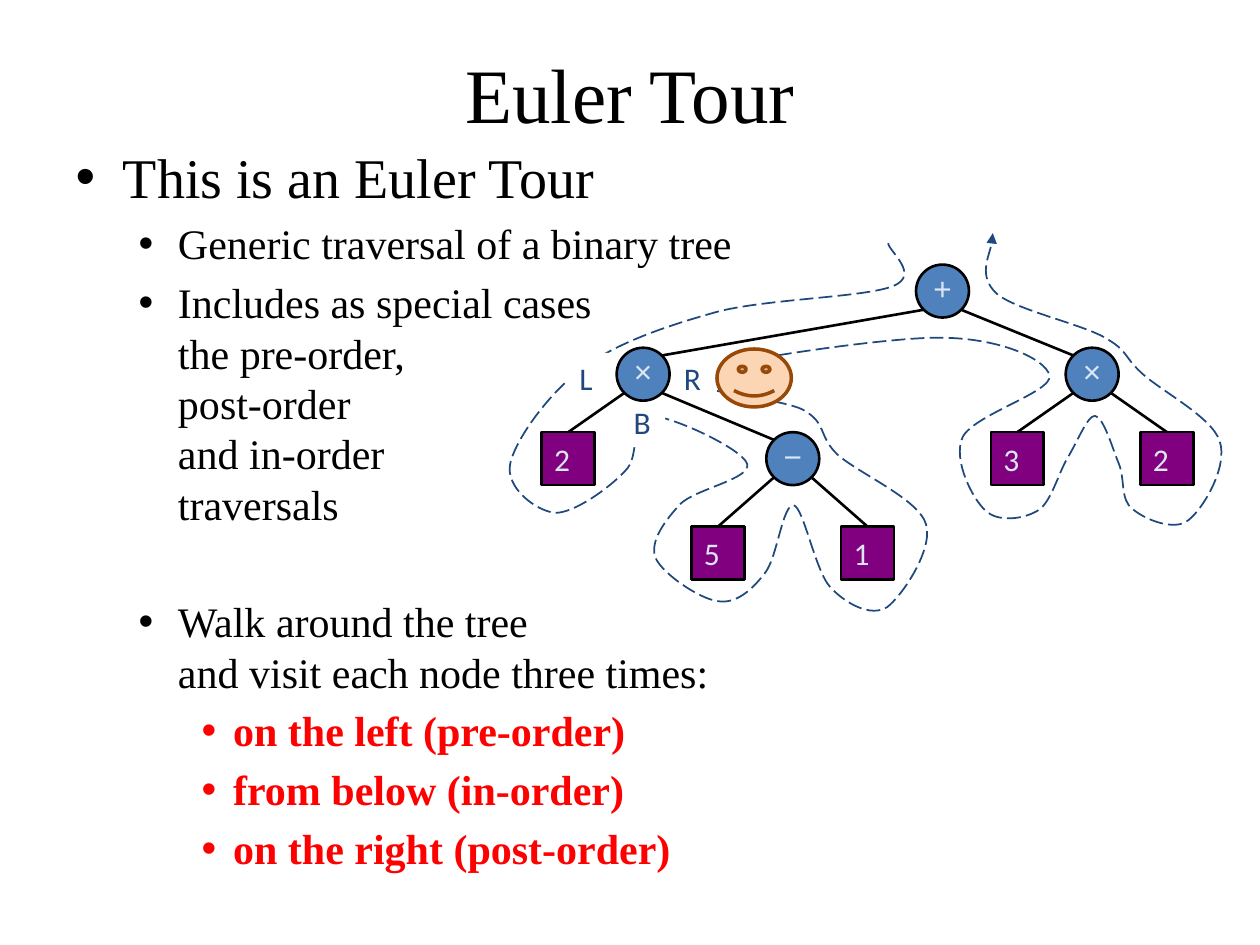
from pptx import Presentation
from pptx.dml.color import RGBColor
from pptx.enum.dml import MSO_LINE
from pptx.enum.shapes import MSO_CONNECTOR, MSO_SHAPE
from pptx.enum.text import MSO_ANCHOR, MSO_AUTO_SIZE, PP_ALIGN
from pptx.oxml.ns import qn
from pptx.util import Inches, Pt
from lxml.etree import SubElement

SERIF = "Times New Roman"
BLACK, RED, NAVY, WHITE = "000000", "FF0000", "1F497D", "FFFFFF"
NODE_FILL, LEAF_FILL, NODE_TEXT = "4F81BD", "800080", "DCE6F2"

# level, text, space before in points
BULLETS = [
    (0, "This is an Euler Tour", 6.4),
    (1, "Generic traversal of a binary tree", 4.8),
    (1, "Includes as special cases\vthe pre-order,\vpost-order\vand in-order\vtraversals", 4.8),
    (1, "Walk around the tree\vand visit each node three times:", 38.2),
    (2, "on the left (pre-order)", 4.8),
    (2, "from below (in-order)", 4.8),
    (2, "on the right (post-order)", 4.8),
]

# An inner node is (symbol, left, right); a leaf is its number.
TREE = ("+", ("×", "2", ("−", "5", "1")), ("×", "3", "2"))
NODE_SIZE = 0.42
FIRST_COLUMN, COLUMN_STEP = 4.3, 0.594
ROW_TOPS = [2.1, 2.76, 3.43, 4.18]
VISIT_LABELS = [("L", 4.5, 2.8, 0.33), ("B", 4.93, 3.15, 0.35), ("R", 5.33, 2.8, 0.36)]

TOUR_START = (7.05, 1.93)
# Two control points and the end point of each curve
TOUR_CURVES = [
    (7.05, 1.99, 7.31, 2.18, 7.09, 2.27), (6.87, 2.36, 6.12, 2.37, 5.71, 2.47),
    (5.31, 2.58, 4.92, 2.71, 4.64, 2.91), (4.36, 3.11, 4.09, 3.49, 4.05, 3.68),
    (4.01, 3.87, 4.25, 4.05, 4.4, 4.07), (4.55, 4.08, 4.84, 3.87, 4.96, 3.74),
    (5.09, 3.62, 4.99, 3.32, 5.15, 3.3), (5.31, 3.29, 5.89, 3.56, 5.93, 3.68),
    (5.97, 3.8, 5.52, 3.88, 5.4, 4), (5.28, 4.13, 5.16, 4.29, 5.2, 4.42),
    (5.25, 4.55, 5.55, 4.75, 5.69, 4.77), (5.84, 4.8, 5.97, 4.68, 6.07, 4.55),
    (6.17, 4.43, 6.21, 4, 6.3, 4.01), (6.38, 4.03, 6.47, 4.53, 6.59, 4.66),
    (6.71, 4.79, 6.91, 4.9, 7.04, 4.82), (7.16, 4.73, 7.41, 4.36, 7.35, 4.16),
    (7.29, 3.96, 6.82, 3.76, 6.65, 3.61), (6.49, 3.46, 6.57, 3.36, 6.37, 3.25),
    (6.17, 3.15, 5.25, 3.08, 5.43, 2.98), (5.61, 2.89, 6.97, 2.68, 7.45, 2.68),
    (7.94, 2.68, 8.3, 2.85, 8.33, 2.98), (8.36, 3.11, 7.73, 3.29, 7.64, 3.47),
    (7.56, 3.65, 7.72, 3.96, 7.82, 4.05), (7.92, 4.15, 8.13, 4.12, 8.24, 4.05),
    (8.34, 3.99, 8.4, 3.76, 8.47, 3.64), (8.55, 3.51, 8.63, 3.3, 8.69, 3.3),
    (8.76, 3.31, 8.83, 3.56, 8.88, 3.68), (8.93, 3.8, 8.89, 3.97, 8.99, 4.04),
    (9.08, 4.12, 9.32, 4.22, 9.43, 4.13), (9.55, 4.04, 9.75, 3.7, 9.68, 3.5),
    (9.62, 3.31, 9.21, 3.1, 9.06, 2.96), (8.91, 2.82, 8.96, 2.79, 8.77, 2.68),
    (8.58, 2.57, 8.06, 2.46, 7.91, 2.33), (7.76, 2.19, 7.89, 1.95, 7.88, 1.85),
]


def rgb(color):
    return RGBColor.from_string(color)


def set_font(paragraph, name, size, color, bold=None):
    font = paragraph.font
    font.name, font.size, font.bold = name, Pt(size), bold
    font.color.rgb = rgb(color)


def place(shape, left, top, width, height):
    shape.left, shape.top = Inches(left), Inches(top)
    shape.width, shape.height = Inches(width), Inches(height)


def set_line(line, color, width):
    line.color.rgb = rgb(color)
    line.width = Pt(width)


def fill_title(title):
    place(title, 0.5, 0.3, 9, 0.87)
    title.text_frame.text = "Euler Tour"
    title.text_frame.vertical_anchor = MSO_ANCHOR.MIDDLE
    paragraph = title.text_frame.paragraphs[0]
    paragraph.alignment = PP_ALIGN.CENTER
    set_font(paragraph, SERIF, 44, BLACK)


def fill_body(body):
    place(body, 0.5, 1.08, 5.99, 5.92)
    frame = body.text_frame
    frame.auto_size = MSO_AUTO_SIZE.NONE
    for index, (level, text, space_before) in enumerate(BULLETS):
        paragraph = frame.add_paragraph() if index else frame.paragraphs[0]
        paragraph.text = text
        paragraph.level = level
        paragraph.space_before = Pt(space_before)
        is_visit = level == 2
        set_font(paragraph, SERIF, 24 if level else 32,
                 RED if is_visit else BLACK, is_visit)
        properties = paragraph._p.get_or_add_pPr()
        bullet = properties.makeelement(qn("a:buChar"), {"char": "•"})
        properties.find(qn("a:defRPr")).addprevious(bullet)


def add_box(shapes, kind, box, fill, outline=None, width=1.5):
    shape = shapes.add_shape(kind, *map(Inches, box))
    shape.shadow.inherit = False
    shape.fill.solid()
    shape.fill.fore_color.rgb = rgb(fill)
    if outline:
        set_line(shape.line, outline, width)
    else:
        shape.line.fill.background()
    return shape


def set_label(shape, text, font, color, alignment=PP_ALIGN.LEFT, anchor=MSO_ANCHOR.MIDDLE):
    frame = shape.text_frame
    frame.text = text
    frame.word_wrap = False
    frame.vertical_anchor = anchor
    frame.paragraphs[0].alignment = alignment
    set_font(frame.paragraphs[0], font, 18, color)


def add_tour(shapes):
    """Draw the dashed walk: line segments are regrouped into cubic curves."""
    points = [(Inches(curve[i]), Inches(curve[i + 1]))
              for curve in TOUR_CURVES for i in (0, 2, 4)]
    builder = shapes.build_freeform(*map(Inches, TOUR_START))
    builder.add_line_segments(points, close=False)
    tour = builder.convert_to_shape()
    tour.shadow.inherit = False
    tour.fill.background()
    set_line(tour.line, NAVY, 1)
    tour.line.dash_style = MSO_LINE.LONG_DASH
    SubElement(tour.line._get_or_add_ln(), qn("a:tailEnd"), type="triangle")
    segments = tour._element.xpath(".//a:lnTo")
    for index in range(0, len(segments), 3):
        curve = segments[0].makeelement(qn("a:cubicBezTo"), {})
        segments[index].addprevious(curve)
        for segment in segments[index:index + 3]:
            curve.append(segment[0])
            segment.getparent().remove(segment)


def ellipse_corner(shape, side, vertical):
    """Point on a circle at 45 degrees; side and vertical are -1 or 1."""
    reach = shape.width / 2 * 0.707
    return (int(shape.left + shape.width / 2 + side * reach),
            int(shape.top + shape.height / 2 + vertical * reach))


def add_edge(shapes, parent, child, side, child_is_leaf):
    end = (child.left + child.width // 2, child.top) if child_is_leaf \
        else ellipse_corner(child, -side, -1)
    edge = shapes.add_connector(MSO_CONNECTOR.STRAIGHT,
                                *ellipse_corner(parent, side, 1), *end)
    if child_is_leaf:
        edge.end_connect(child, 0)
    set_line(edge.line, BLACK, 1.5)
    SubElement(edge._element.spPr, qn("a:effectLst"))


def add_tree(shapes, node, column=0, depth=0):
    """Place nodes in in-order columns; return the root shape and next column."""
    is_leaf = isinstance(node, str)
    if not is_leaf:
        symbol, left, right = node
        left_shape, column = add_tree(shapes, left, column, depth + 1)
    box = (FIRST_COLUMN + column * COLUMN_STEP, ROW_TOPS[depth], NODE_SIZE, NODE_SIZE)
    if is_leaf:
        shape = add_box(shapes, MSO_SHAPE.RECTANGLE, box, LEAF_FILL, BLACK)
        set_label(shape, node, "Calibri", NODE_TEXT)
        return shape, column + 1
    shape = add_box(shapes, MSO_SHAPE.OVAL, box, NODE_FILL, BLACK)
    set_label(shape, symbol, "Arial", NODE_TEXT, PP_ALIGN.CENTER)
    frame = shape.text_frame
    frame.margin_left = frame.margin_right = frame.margin_top = 0
    frame.margin_bottom = Inches(0.05)
    right_shape, next_column = add_tree(shapes, right, column + 1, depth + 1)
    add_edge(shapes, shape, left_shape, -1, isinstance(left, str))
    add_edge(shapes, shape, right_shape, 1, isinstance(right, str))
    return shape, next_column


def main():
    presentation = Presentation()
    presentation.slide_width, presentation.slide_height = Inches(10), Inches(7.5)
    slide = presentation.slides.add_slide(presentation.slide_layouts[1])
    shapes = slide.shapes
    fill_title(shapes.title)
    fill_body(slide.placeholders[1])
    add_tour(shapes)
    for text, left, top, width in VISIT_LABELS:
        label = add_box(shapes, MSO_SHAPE.RECTANGLE, (left, top, width, 0.4), WHITE)
        set_label(label, text, "Calibri", NAVY, anchor=MSO_ANCHOR.TOP)
    add_tree(shapes, TREE)
    add_box(shapes, MSO_SHAPE.SMILEY_FACE, (5.69, 2.77, 0.59, 0.46), "FCD5B5", "984807", 2)
    presentation.save("out.pptx")


if __name__ == "__main__":
    main()
